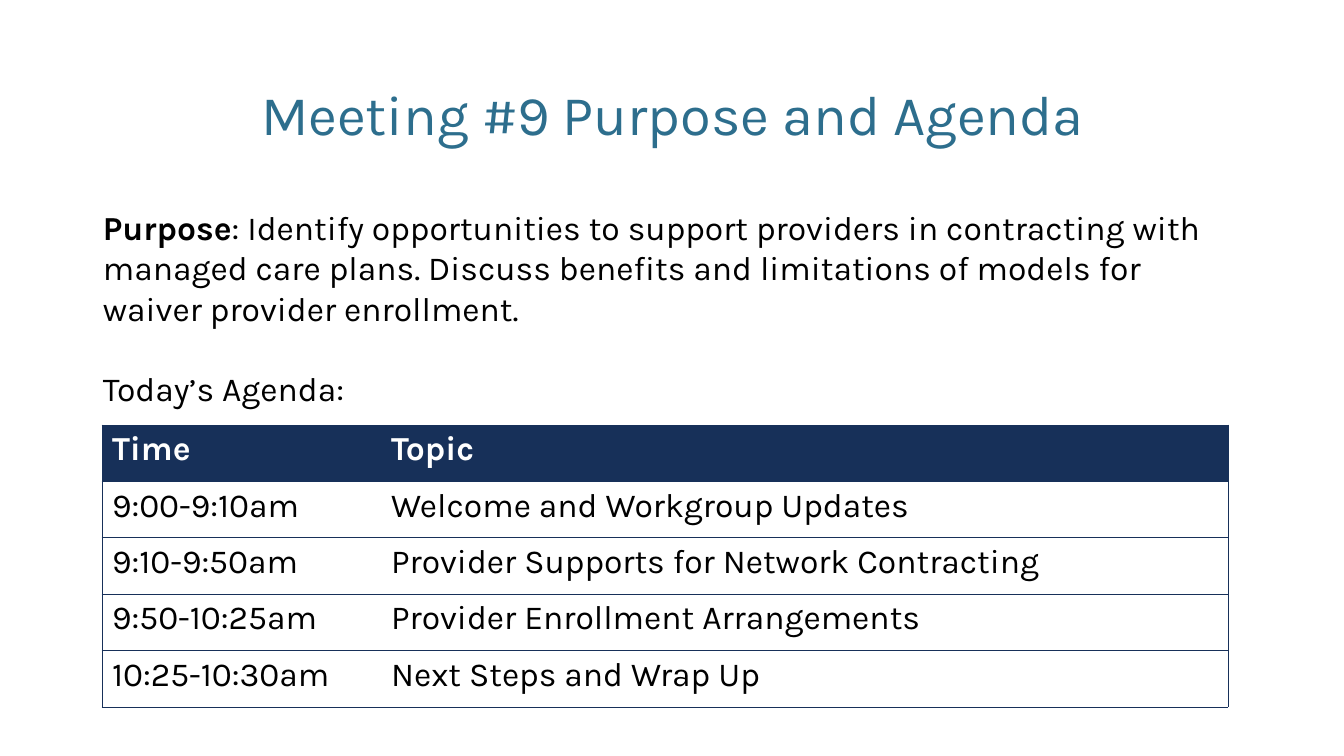
"""Build the meeting purpose and agenda slide."""
from lxml.etree import SubElement
from pptx import Presentation
from pptx.dml.color import RGBColor
from pptx.enum.text import MSO_ANCHOR, PP_ALIGN
from pptx.oxml.ns import qn
from pptx.util import Pt

PX = 914400 / 100.8
NAVY = "173059"
ROWS = [
    ("Time", "Topic"),
    ("9:00-9:10am", "Welcome and Workgroup Updates"),
    ("9:10-9:50am", "Provider Supports for Network Contracting"),
    ("9:50-10:25am", "Provider Enrollment Arrangements"),
    ("10:25-10:30am", "Next Steps and Wrap Up"),
]


def px(*sizes):
    return [round(size * PX) for size in sizes]


def write(para, text, size=24, color="000000", bold=False):
    run = para.add_run()
    run.text = text
    run.font.name = "Karla"
    run.font.size = Pt(size)
    run.font.bold = bold
    run.font.color.rgb = RGBColor.from_string(color)


deck = Presentation()
deck.slide_width, deck.slide_height = px(1344, 756)
slide = deck.slides.add_slide(deck.slide_layouts[6])

title = slide.shapes.add_textbox(*px(93, 40, 1159, 146)).text_frame
title.word_wrap = True
title.vertical_anchor = MSO_ANCHOR.MIDDLE
title.paragraphs[0].alignment = PP_ALIGN.CENTER
write(title.paragraphs[0], "Meeting #9 Purpose and Agenda", size=40, color="2D6E8D")

body = slide.shapes.add_textbox(*px(93, 202, 1159, 215)).text_frame
body.word_wrap = True
goal = body.paragraphs[0]
write(goal, "Purpose", bold=True)
write(goal, ": Identify opportunities to support providers in contracting with "
      "managed care plans. Discuss benefits and limitations of models for "
      "waiver provider enrollment.")
today = body.add_paragraph()
today.space_before = Pt(28.8)
write(today, "Today’s Agenda:")
for para in body.paragraphs:
    para.line_spacing = Pt(28.8)

table = slide.shapes.add_table(len(ROWS), 2, *px(102, 425, 1126, 282)).table
table.first_row = table.horz_banding = False
for col, width in zip(table.columns, px(279, 847)):
    col.width = width
for r, texts in enumerate(ROWS):
    head = r == 0
    for c, text in enumerate(texts):
        cell = table.cell(r, c)
        props = cell._tc.get_or_add_tcPr()
        inner = "lnL" if c else "lnR"
        for side in ("lnL", "lnR", "lnT", "lnB"):
            line = SubElement(props, qn(f"a:{side}"), w=str(Pt(0.5)))
            if side == inner:
                SubElement(line, qn("a:noFill"))
            else:
                fill = SubElement(line, qn("a:solidFill"))
                SubElement(fill, qn("a:srgbClr"), val=NAVY)
        cell.fill.solid()
        cell.fill.fore_color.rgb = RGBColor.from_string(NAVY if head else "FFFFFF")
        write(cell.text_frame.paragraphs[0], text,
              color="FFFFFF" if head else "000000", bold=head)

deck.save("out.pptx")
